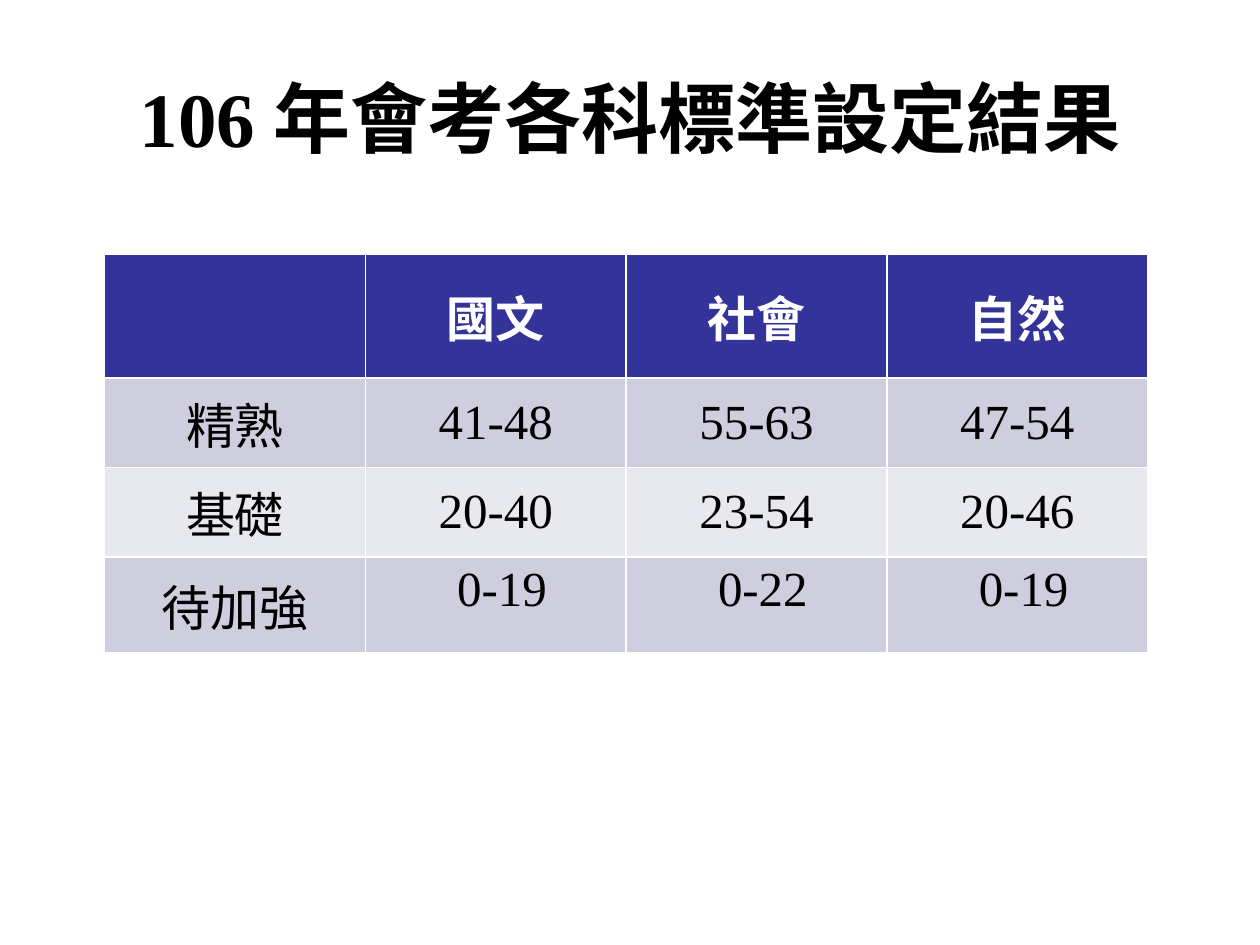
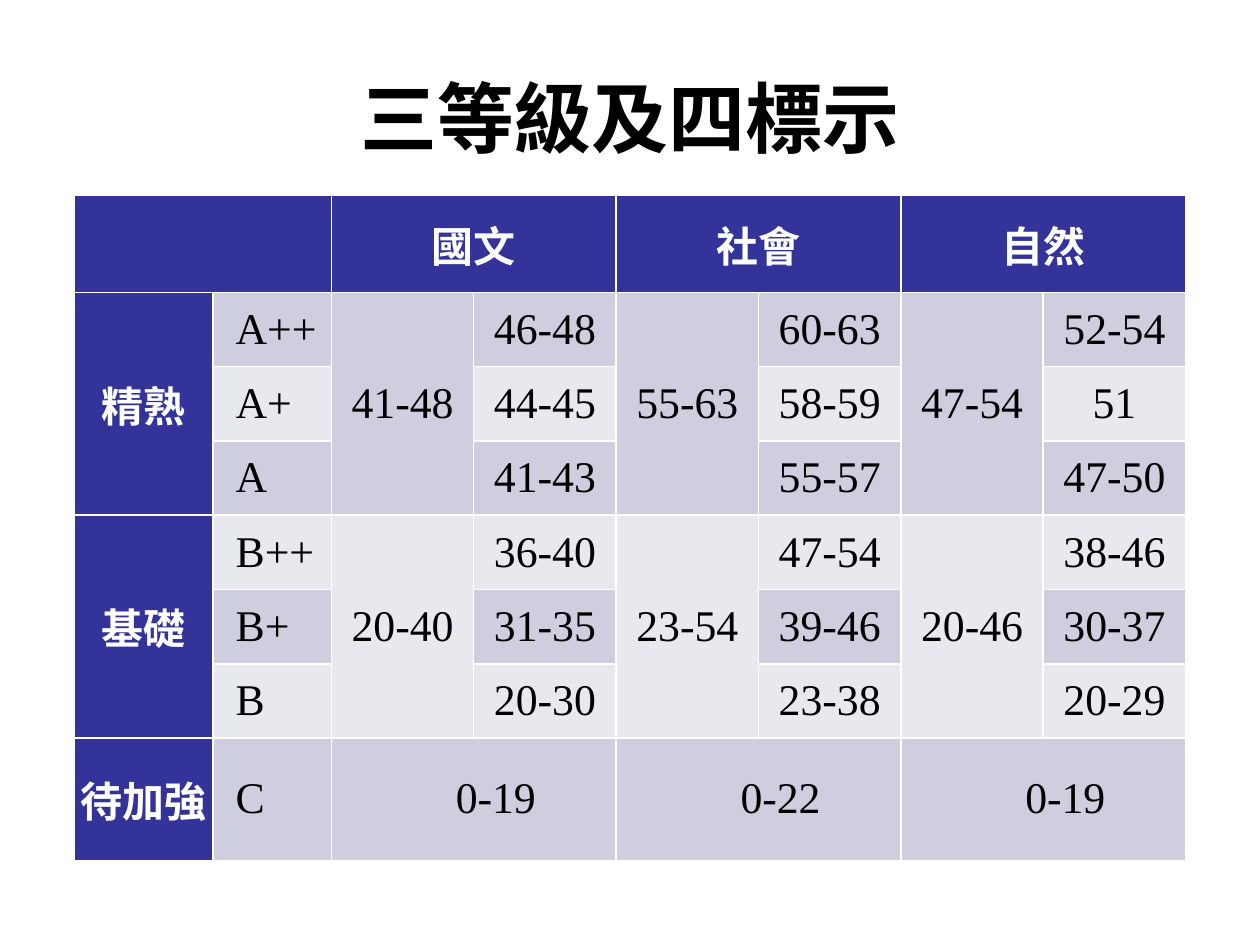
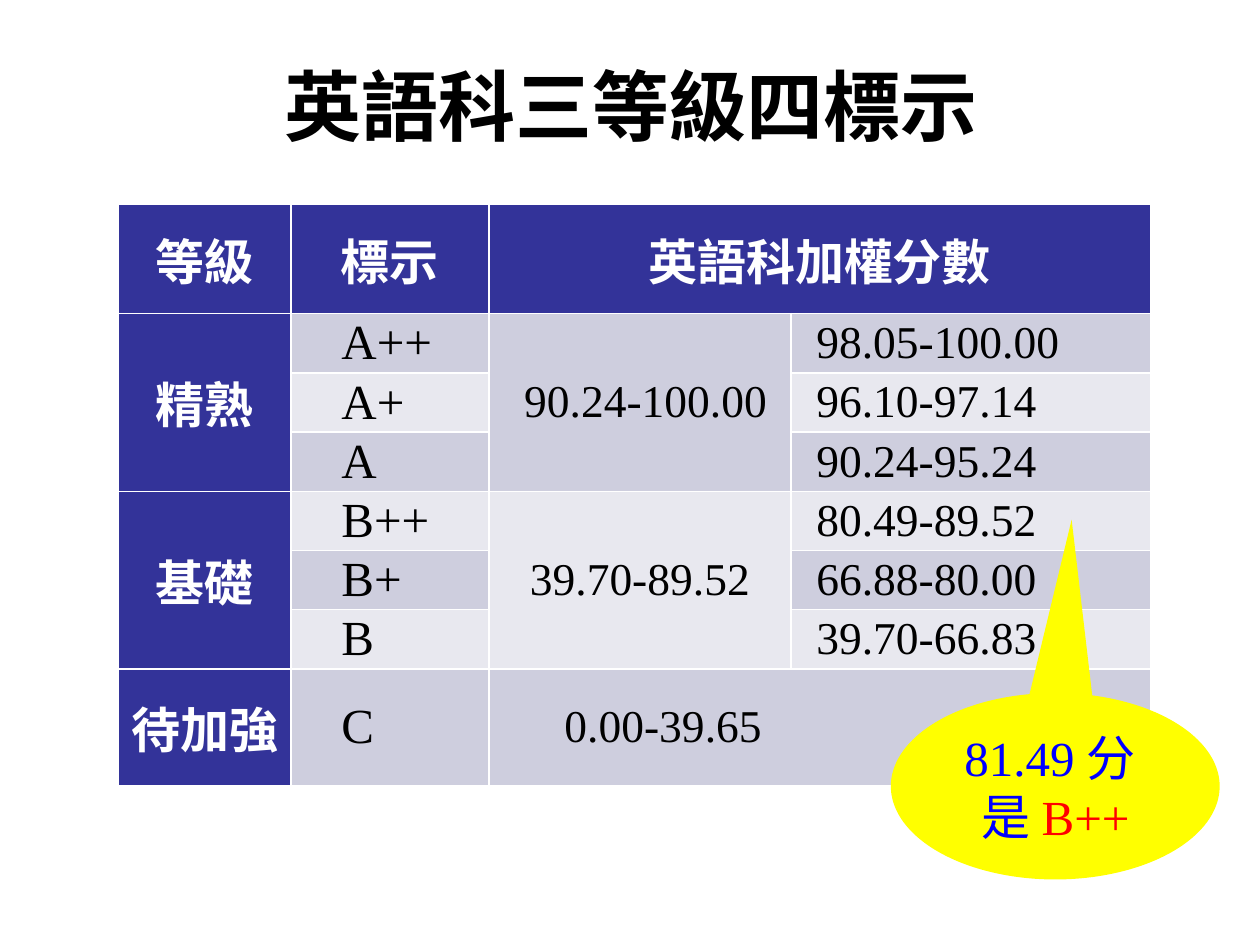
from lxml import etree
from pptx import Presentation
from pptx.dml.color import RGBColor
from pptx.enum import shapes, text
from pptx.oxml import ns
from pptx.util import Inches, Pt

# Shared look
NAVY = RGBColor(0x33, 0x33, 0x99)
BAND_DARK = RGBColor(0xCE, 0xCE, 0xDE)
BAND_LIGHT = RGBColor(0xE8, 0xE8, 0xEF)
WHITE = RGBColor(0xFF, 0xFF, 0xFF)
BLACK = RGBColor(0, 0, 0)
YELLOW = RGBColor(0xFF, 0xFF, 0)
BLUE = RGBColor(0, 0, 0xFF)
RED = RGBColor(0xFF, 0, 0)
SERIF, SANS, CJK = "Times New Roman", "Arial", "Noto Sans CJK SC"
LEFT, CENTER = text.PP_ALIGN.LEFT, text.PP_ALIGN.CENTER
MIDDLE, TOP = text.MSO_ANCHOR.MIDDLE, text.MSO_ANCHOR.TOP

# Grid marks: the cell belongs to the one at its left, or above it
JOIN_LEFT, JOIN_UP = "<", "^"
TIGHT = (0.02, 0, 0.02, 0)
ROOMY = (0.1, 0.05, 0.1, 0.05)


def add_run(paragraph, words, size, color=BLACK, bold=False, font=SERIF):
    run = paragraph.add_run()
    run.text = words
    run.font.size, run.font.bold, run.font.name = Pt(size), bold, font
    run.font.color.rgb = color
    latin = run.font._element.find(ns.qn("a:latin"))
    east_asian = etree.Element(ns.qn("a:ea"), typeface=CJK)
    latin.addnext(east_asian)


def add_title(slide, words, box, font=CJK):
    title = slide.shapes.title
    title.left, title.top, title.width, title.height = map(Inches, box)
    frame = title.text_frame
    frame.auto_size = text.MSO_AUTO_SIZE.NONE
    frame.vertical_anchor = MIDDLE
    frame.paragraphs[0].alignment = CENTER
    add_run(frame.paragraphs[0], words, 44, bold=True, font=font)


def write_cell(cell, words, size, heading=False, font=SERIF, align=CENTER,
               insets=TIGHT, indent=0, anchor=MIDDLE):
    left, top, right, bottom = insets
    cell.margin_left, cell.margin_top = Inches(left + indent), Inches(top)
    cell.margin_right, cell.margin_bottom = Inches(right), Inches(bottom)
    cell.vertical_anchor = anchor
    paragraph = cell.text_frame.paragraphs[0]
    paragraph.alignment = align
    if words:
        add_run(paragraph, words, size, WHITE if heading else BLACK, heading,
                SANS if heading else font)


def add_grid(slide, left, top, widths, heights, grid, style, heading_column=True):
    """Draw a banded table; style(row, column) gives the format of body cells."""
    table = slide.shapes.add_table(
        len(heights), len(widths), Inches(left), Inches(top),
        Inches(sum(widths)), Inches(sum(heights))).table
    for column, width in zip(table.columns, widths):
        column.width = Inches(width)
    for row, height in zip(table.rows, heights):
        row.height = Inches(height)

    for r, line in enumerate(grid):
        for c, words in enumerate(line):
            cell = table.cell(r, c)
            heading = r == 0 or (heading_column and c == 0)
            cell.fill.solid()
            cell.fill.fore_color.rgb = (
                NAVY if heading else BAND_DARK if r % 2 else BAND_LIGHT)
            if words in (JOIN_LEFT, JOIN_UP):
                continue
            last_row, last_column = r, c
            while last_row + 1 < len(grid) and grid[last_row + 1][c] == JOIN_UP:
                last_row += 1
            while last_column + 1 < len(line) and line[last_column + 1] == JOIN_LEFT:
                last_column += 1
            if (last_row, last_column) != (r, c):
                cell.merge(table.cell(last_row, last_column))
            write_cell(cell, words, heading=heading, **style(r, c))


def add_callout(slide, box):
    callout = slide.shapes.add_shape(
        shapes.MSO_SHAPE.OVAL_CALLOUT, *map(Inches, box))
    callout.shadow.inherit = False
    callout.adjustments[0], callout.adjustments[1] = 0.05, -1.43
    callout.fill.solid()
    callout.fill.fore_color.rgb = YELLOW
    callout.line.fill.background()
    frame = callout.text_frame
    frame.word_wrap = True
    frame.vertical_anchor = MIDDLE
    paragraph = frame.paragraphs[0]
    paragraph.alignment = CENTER
    add_run(paragraph, "81.49分 ", 28, BLUE)
    paragraph.add_line_break()
    add_run(paragraph, "是", 28, BLUE)
    add_run(paragraph, "B++", 28, RED)


# Three levels for each subject
def levels_slide(slide):
    add_title(slide, "106年會考各科標準設定結果", (0.91, 0.3, 8.19, 1.25), SERIF)
    grid = [
        ["", "國文", "社會", "自然"],
        ["精熟", "41-48", "55-63", "47-54"],
        ["基礎", "20-40", "23-54", "20-46"],
        ["待加強", "0-19", "0-22", "0-19"],
    ]

    def style(r, c):
        if r == 3 and c:
            return dict(size=28, insets=ROOMY, indent=0.1, anchor=TOP)
        return dict(size=28, insets=TIGHT if r else ROOMY, font=SERIF if c else SANS)

    add_grid(slide, 0.83, 2.02, [2.07] * 4, [0.98, 0.71, 0.71, 0.76], grid,
             style, heading_column=False)


# Levels split into marks for each subject
def marks_slide(slide):
    add_title(slide, "三等級及四標示", (0.5, 0.3, 9, 1.25))
    grid = [
        ["", "<", "國文", "<", "社會", "<", "自然", "<"],
        ["精熟", "A++", "41-48", "46-48", "55-63", "60-63", "47-54", "52-54"],
        ["^", "A+", "^", "44-45", "^", "58-59", "^", "51"],
        ["^", "A", "^", "41-43", "^", "55-57", "^", "47-50"],
        ["基礎", "B++", "20-40", "36-40", "23-54", "47-54", "20-46", "38-46"],
        ["^", "B+", "^", "31-35", "^", "39-46", "^", "30-37"],
        ["^", "B", "^", "20-30", "^", "23-38", "^", "20-29"],
        ["待加強", "C", "0-19", "<", "0-22", "<", "0-19", "<"],
    ]

    def style(r, c):
        if r == 0 or c == 0:
            return dict(size=24)
        if c == 1:
            return dict(size=25, align=LEFT, indent=0.16)
        return dict(size=25, indent=0.35 if r == 7 else 0)

    add_grid(slide, 0.59, 1.55, [1.1, 0.94] + [1.13] * 6,
             [0.77] + [0.59] * 6 + [0.97], grid, style)


# Weighted English scores
def english_slide(slide):
    add_title(slide, "英語科三等級四標示", (0.51, 0.21, 9, 1.25))
    grid = [
        ["等級", "標示", "英語科加權分數", "<"],
        ["精熟", "A++", "90.24-100.00", "98.05-100.00"],
        ["^", "A+", "^", "96.10-97.14"],
        ["^", "A", "^", "90.24-95.24"],
        ["基礎", "B++", "39.70-89.52", "80.49-89.52"],
        ["^", "B+", "^", "66.88-80.00"],
        ["^", "B", "^", "39.70-66.83"],
        ["待加強", "C", "0.00-39.65", "<"],
    ]

    def style(r, c):
        if r == 0 or c == 0:
            return dict(size=28)
        if c == 1:
            return dict(size=28, align=LEFT, indent=0.38)
        if c == 3:
            return dict(size=26, align=LEFT, indent=0.18)
        if r == 7:
            return dict(size=26, align=LEFT, indent=0.58)
        return dict(size=26, indent=0.09 if r == 1 else 0)

    add_grid(slide, 0.94, 1.62, [1.37, 1.57, 2.4, 2.85],
             [0.87] + [0.47] * 6 + [0.93], grid, style)
    add_callout(slide, (7.07, 5.5, 2.61, 1.48))


def main():
    deck = Presentation()
    deck.slide_width, deck.slide_height = Inches(10), Inches(7.5)
    title_only = deck.slide_layouts[5]
    for build in (levels_slide, marks_slide, english_slide):
        build(deck.slides.add_slide(title_only))
    deck.save("out.pptx")


if __name__ == "__main__":
    main()
